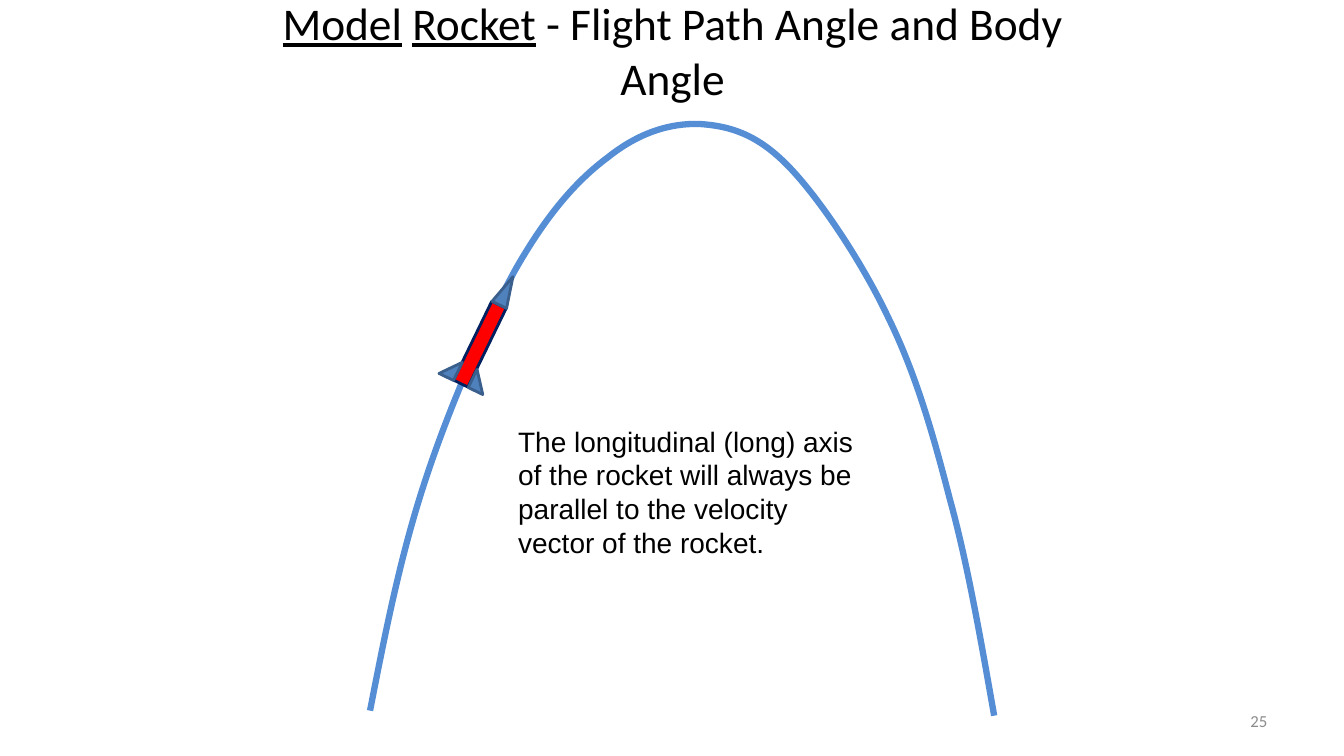
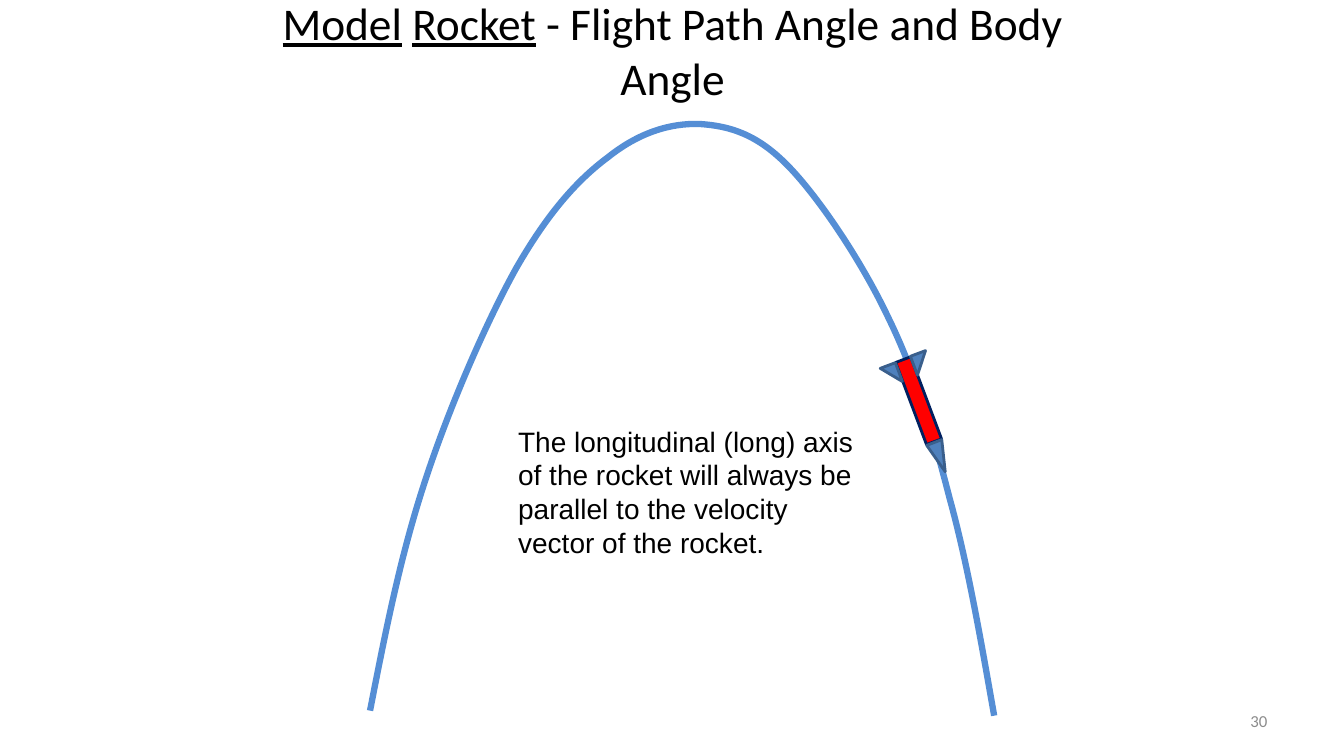
from math import cos, radians, sin

from pptx import Presentation
from pptx.dml.color import RGBColor
from pptx.enum.shapes import MSO_SHAPE
from pptx.enum.text import MSO_ANCHOR, MSO_AUTO_SIZE, PP_ALIGN
from pptx.oxml.xmlchemy import OxmlElement
from pptx.util import Pt

PX = 9144
TITLE_ONLY = 5
LEFT, CENTER, RIGHT = PP_ALIGN.LEFT, PP_ALIGN.CENTER, PP_ALIGN.RIGHT
TOP, MIDDLE = MSO_ANCHOR.TOP, MSO_ANCHOR.MIDDLE
NO_FIT, GROW = MSO_AUTO_SIZE.NONE, MSO_AUTO_SIZE.SHAPE_TO_FIT_TEXT
BODY, FIN, NOSE = MSO_SHAPE.RECTANGLE, MSO_SHAPE.RIGHT_TRIANGLE, MSO_SHAPE.ISOSCELES_TRIANGLE

BLACK = RGBColor(0x00, 0x00, 0x00)
GRAY = RGBColor(0x8C, 0x8C, 0x8C)
SKY = RGBColor(0x55, 0x8E, 0xD5)
RED = RGBColor(0xFF, 0x00, 0x00)
NAVY = RGBColor(0x00, 0x20, 0x60)
STEEL = RGBColor(0x4F, 0x81, 0xBD)
SLATE = RGBColor(0x3A, 0x5F, 0x8C)

TITLE_FONT = {"name": "Calibri", "size": Pt(32.4)}
NUMBER_FONT = {"name": "Calibri", "size": Pt(12)}
NOTE_FONT = {"name": "Arial", "size": Pt(20)}

TITLE = [("Model", True), (" ", False), ("Rocket", True),
         (" - Flight Path Angle and Body Angle", False)]
NOTE = ("The longitudinal (long) axis of the rocket will always be "
        "parallel to the velocity vector of the rocket.")

TRAJECTORY = [
    (367, 705),
    (382, 628), (397, 552), (421, 479),
    (445, 405), (482, 320), (512, 266),
    (543, 212), (572, 179), (603, 156),
    (633, 132), (664, 122), (694, 123),
    (724, 125), (751, 133), (782, 165),
    (813, 197), (855, 260), (881, 315),
    (908, 370), (925, 429), (942, 495),
    (960, 560), (974, 642), (986, 710),
]

ROCKET_PARTS = [
    (BODY, 0, 0, 16, 87, RED, NAVY, False),
    (FIN, 16, 33, 16, 20, STEEL, SLATE, False),
    (FIN, -16, 33, 16, 20, STEEL, SLATE, True),
    (NOSE, 0, -60, 16, 31, STEEL, SLATE, False),
]

FLIGHTS = [("25", (476, 342), 25.9), ("30", (911, 397), 159.4)]


class FlightDeck:
    """Holds the deck, its style and the current slide."""

    def __init__(self):
        """Start an empty wide deck."""
        self.deck = Presentation()
        self.deck.slide_width, self.deck.slide_height = 1333 * PX, 750 * PX
        self.page = None

    def add_page(self):
        """Start a new title-only slide."""
        layout = self.deck.slide_layouts[TITLE_ONLY]
        self.page = self.deck.slides.add_slide(layout)

    def place(self, box, left, top, width, height):
        """Set the position and size of a box in px."""
        frame = {"left": left, "top": top, "width": width, "height": height}
        for name, value in frame.items():
            setattr(box, name, value * PX)

    def fill_text(self, box, spans, font, color, align, anchor, fit=NO_FIT):
        """Fill a box with one paragraph of plain and underlined spans."""
        frame = box.text_frame
        layout = {"word_wrap": True, "auto_size": fit, "vertical_anchor": anchor}
        for name, value in layout.items():
            setattr(frame, name, value)
        para = frame.paragraphs[0]
        para.alignment = align
        for text, underline in spans:
            span = para.add_run()
            span.text = text
            for name, value in {**font, "underline": underline}.items():
                setattr(span.font, name, value)
            span.font.color.rgb = color

    def title(self, spans):
        """Place and fill the title placeholder."""
        box = self.page.shapes.title
        self.place(box, 217, 21, 900, 57)
        self.fill_text(box, spans, TITLE_FONT, BLACK, CENTER, MIDDLE)

    def text(self, area, text, *style):
        """Add a text box."""
        box = self.page.shapes.add_textbox(0, 0, 0, 0)
        self.place(box, *area)
        self.fill_text(box, [(text, False)], *style)

    def outline(self, shape, color, width):
        """Give a shape a flat outline."""
        shape.shadow.inherit = False
        shape.line.color.rgb = color
        shape.line.width = Pt(width)

    def curve(self, points):
        """Draw an open chain of cubic curves through px points."""
        builder = self.page.shapes.build_freeform(*points[0], scale=PX)
        builder.add_line_segments(points[1:], close=False)
        shape = builder.convert_to_shape()
        shape.fill.background()
        self.outline(shape, SKY, 4.5)
        segments = shape._element.xpath(".//a:lnTo")
        for start in range(0, len(segments), 3):
            bend = OxmlElement("a:cubicBezTo")
            segments[start].addprevious(bend)
            for segment in segments[start:start + 3]:
                bend.append(segment[0])
                segment.getparent().remove(segment)

    def rocket(self, center, angle):
        """Draw a grouped rocket turned about the centre of its body."""
        group = self.page.shapes.add_group_shape()
        c, s = cos(radians(angle)), sin(radians(angle))
        for kind, dx, dy, width, height, fill, line, flipped in ROCKET_PARTS:
            left = round(center[0] + dx * c - dy * s - width / 2)
            top = round(center[1] + dx * s + dy * c - height / 2)
            part = group.shapes.add_shape(
                kind, left * PX, top * PX, width * PX, height * PX)
            part.rotation = angle
            part.fill.solid()
            part.fill.fore_color.rgb = fill
            self.outline(part, line, 2)
            if flipped:
                part._element.spPr.xfrm.set("flipH", "1")


def main():
    """Build and save the deck."""
    flight = FlightDeck()
    for number, center, angle in FLIGHTS:
        flight.add_page()
        flight.curve(TRAJECTORY)
        flight.rocket(center, angle)
        flight.title(TITLE)
        flight.text((956, 695, 311, 40), number, NUMBER_FONT, GRAY, RIGHT, MIDDLE)
        flight.text((504, 416, 362, 145), NOTE, NOTE_FONT, BLACK, LEFT, TOP, GROW)
    flight.deck.save("out.pptx")


if __name__ == "__main__":
    main()
